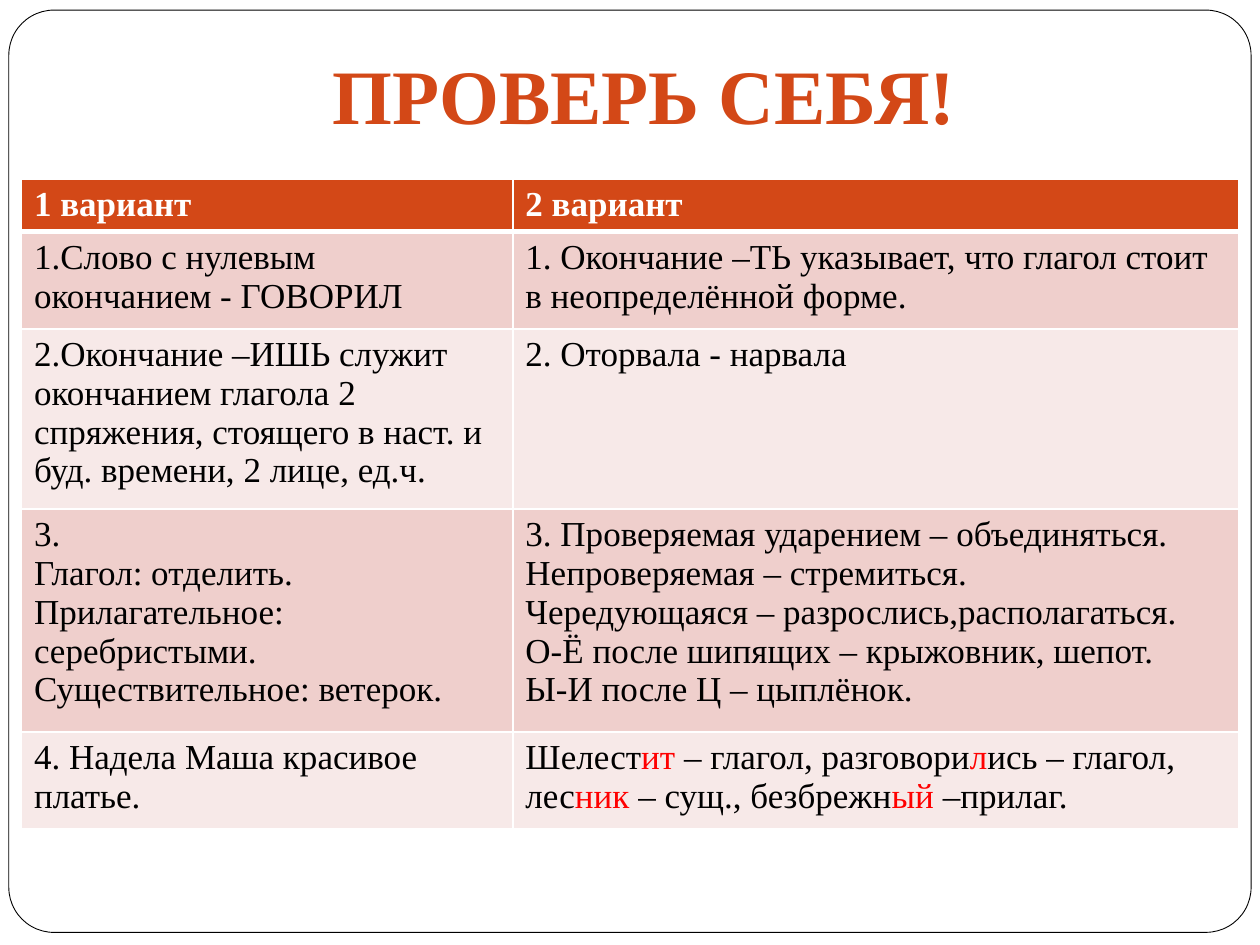
from lxml import etree
from pptx import Presentation
from pptx import util as u
from pptx.dml.color import RGBColor
from pptx.enum import shapes, text
from pptx.oxml import ns

WHITE = RGBColor(0xFF, 0xFF, 0xFF)
BLACK = RGBColor(0, 0, 0)
RED = RGBColor(0xFF, 0, 0)
ORANGE = RGBColor(0xD3, 0x48, 0x17)
PINK = RGBColor(0xEF, 0xCF, 0xCC)
PALE_PINK = RGBColor(0xF7, 0xE9, 0xE8)

COLUMN_WIDTHS = [3.9, 5.76]
ROW_HEIGHTS = [0.42, 0.77, 1.43, 1.77, 0.77]

# One list of paragraphs per cell; endings between bars are red.
ANSWERS = [
    (["1 вариант"], ["2 вариант"]),
    (["1.Слово с нулевым окончанием - ГОВОРИЛ"],
     ["1. Окончание –ТЬ указывает, что глагол стоит в неопределённой форме."]),
    (["2.Окончание –ИШЬ служит окончанием глагола 2 спряжения, "
      "стоящего в наст. и буд. времени, 2 лице, ед.ч."],
     ["2. Оторвала - нарвала"]),
    (["3.", "Глагол: отделить.", "Прилагательное: серебристыми.",
      "Существительное: ветерок."],
     ["3. Проверяемая ударением – объединяться.",
      "Непроверяемая – стремиться.",
      "Чередующаяся – разрослись,располагаться.",
      "О-Ё после шипящих – крыжовник, шепот.",
      "Ы-И после Ц – цыплёнок."]),
    (["4. Надела Маша красивое платье."],
     ["Шелест|ит |– глагол, разговори|л|ись – глагол, лес|ник "
      "|– сущ., безбрежн|ый| –прилаг."]),
]


class SlideBuilder:
    font = "Times New Roman"
    title_size = 44
    table_size = 20

    def __init__(self, slide):
        self.slide = slide

    def add_run(self, paragraph, words, size, color, bold=False):
        run = paragraph.add_run()
        run.text = words
        run.font.name = self.font
        run.font.size = u.Pt(size)
        run.font.bold = bold
        run.font.color.rgb = color

    def frame(self, left, top, width, height):
        """Draw the rounded page border behind everything else."""
        border = self.slide.shapes.add_shape(
            shapes.MSO_SHAPE.ROUNDED_RECTANGLE,
            *map(u.Inches, (left, top, width, height)))
        border.adjustments[0] = 0.049
        border.shadow.inherit = False
        border.fill.solid()
        border.fill.fore_color.rgb = WHITE
        border.line.color.rgb = BLACK
        border.line.width = u.Pt(0.5)
        tree = self.slide.shapes.element
        tree.remove(border.element)
        tree.insert(2, border.element)

    def title(self, words, left, top, width, height):
        heading = self.slide.shapes.title
        heading.left, heading.top, heading.width, heading.height = map(
            u.Inches, (left, top, width, height))
        body = heading.text_frame
        body.word_wrap = False
        body.vertical_anchor = text.MSO_ANCHOR.TOP
        paragraph = body.paragraphs[0]
        paragraph.alignment = text.PP_ALIGN.CENTER
        self.add_run(paragraph, words, self.title_size, ORANGE, bold=True)

    def table(self, answers, left, top):
        grid = self.slide.shapes.add_table(
            len(answers), len(COLUMN_WIDTHS), u.Inches(left), u.Inches(top),
            u.Inches(sum(COLUMN_WIDTHS)), u.Inches(sum(ROW_HEIGHTS))).table
        for column, width in zip(grid.columns, COLUMN_WIDTHS):
            column.width = u.Inches(width)
        for number, (row, height) in enumerate(zip(grid.rows, ROW_HEIGHTS)):
            row.height = u.Inches(height)
            for cell, paragraphs in zip(row.cells, answers[number]):
                self.cell(cell, paragraphs, number)

    def cell(self, cell, paragraphs, row_number):
        header = row_number == 0
        cell.fill.solid()
        cell.fill.fore_color.rgb = (
            ORANGE if header else PINK if row_number % 2 else PALE_PINK)
        self.borders(cell, top=3 if row_number == 1 else 1,
                     bottom=3 if header else 1)
        for index, words in enumerate(paragraphs):
            body = cell.text_frame
            paragraph = body.add_paragraph() if index else body.paragraphs[0]
            for part, piece in enumerate(words.split("|")):
                color = WHITE if header else RED if part % 2 else BLACK
                self.add_run(paragraph, piece, self.table_size, color, header)

    def borders(self, cell, top, bottom):
        properties = cell._tc.get_or_add_tcPr()
        sides = {"lnL": 1, "lnR": 1, "lnT": top, "lnB": bottom}
        for position, (side, width) in enumerate(sides.items()):
            line = etree.Element(ns.qn("a:" + side), w=str(u.Pt(width)))
            fill = etree.SubElement(line, ns.qn("a:solidFill"))
            etree.SubElement(fill, ns.qn("a:srgbClr"), val=str(WHITE))
            properties.insert(position, line)


def main():
    deck = Presentation()
    deck.slide_width, deck.slide_height = u.Inches(10), u.Inches(7.5)
    title_only = deck.slide_layouts[5]
    builder = SlideBuilder(deck.slides.add_slide(title_only))
    builder.frame(0.07, 0.08, 9.86, 7.32)
    builder.title("ПРОВЕРЬ СЕБЯ!", 2.17, 0.33, 5.89, 0.84)
    builder.table(ANSWERS, 0.17, 1.42)
    deck.save("out.pptx")


if __name__ == "__main__":
    main()
